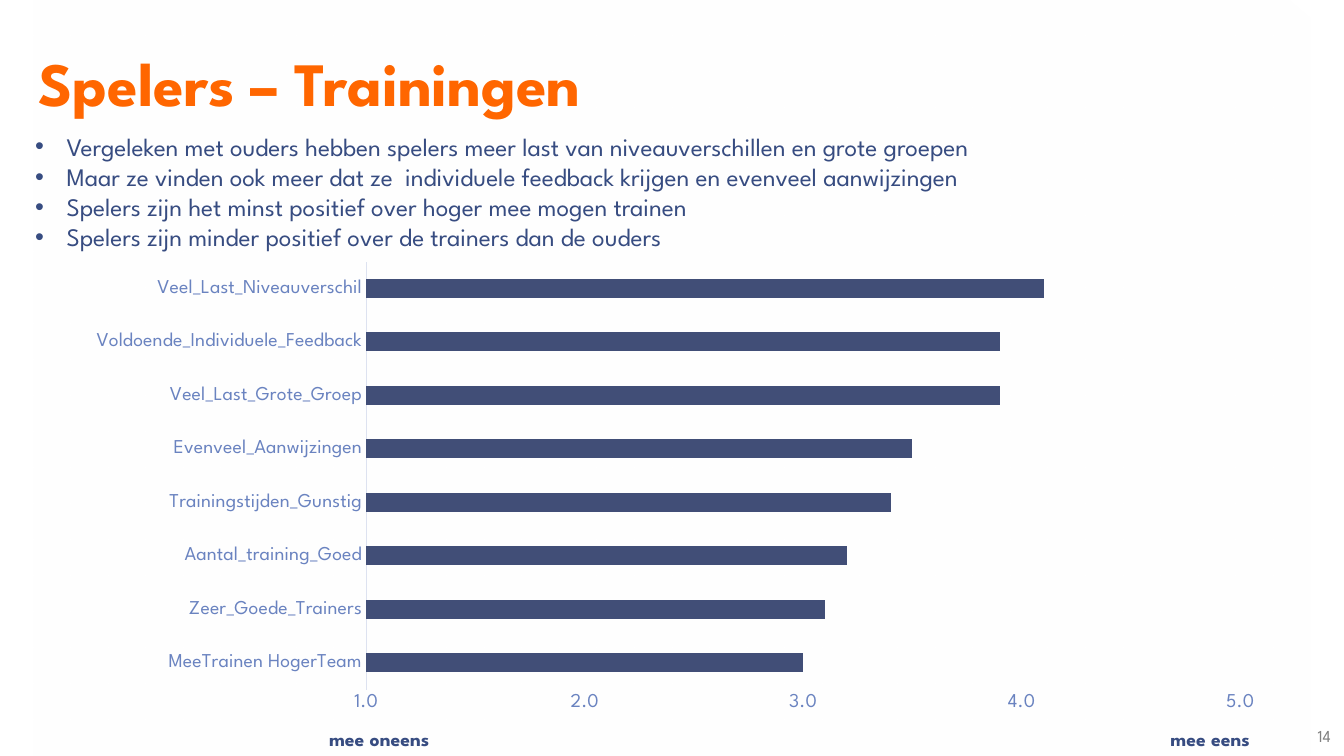
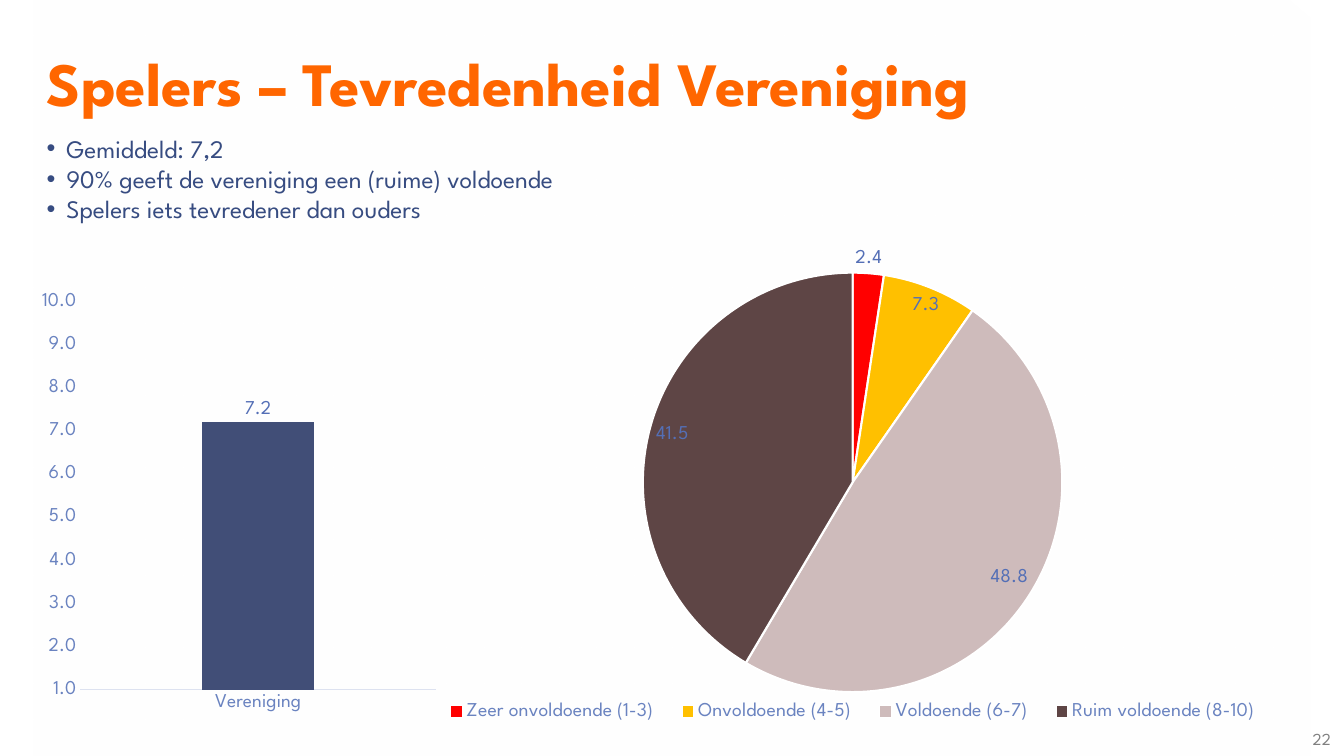
import dataclasses

import lxml.etree
import pptx
import pptx.chart.data
import pptx.dml.color
import pptx.enum.chart
import pptx.enum.shapes
import pptx.enum.text
import pptx.oxml.ns
import pptx.util

Pt = pptx.util.Pt
Kind = pptx.enum.chart.XL_CHART_TYPE
Spot = pptx.enum.chart.XL_LABEL_POSITION
Align = pptx.enum.text.PP_ALIGN
Anchor = pptx.enum.text.MSO_ANCHOR


@dataclasses.dataclass(frozen=True)
class Theme:
    font: str = "League Spartan"
    # Colours
    paper: str = "FFFFFF"
    title: str = "FF6600"
    text: str = "374C81"
    axis: str = "6A83C0"
    label: str = "546FB6"
    line: str = "DDE2F0"
    bar: str = "414E77"
    page: str = "808080"
    pie: tuple = ("FF0000", "FFC000", "CEBBBB", "5E4545")
    # Type sizes
    head: int = 44
    body: int = 18
    small: int = 14
    foot: int = 12


def color(code):
    return pptx.dml.color.RGBColor.from_string(code)


def add(parent, tag, **attrs):
    node = lxml.etree.SubElement(parent, pptx.oxml.ns.qn(tag))
    for name, value in attrs.items():
        node.set(name, str(value))
    return node


def place(parent, index, area, target=None):
    """Fix a chart part to an area, in shares of the chart."""
    for old in parent.findall(pptx.oxml.ns.qn("c:layout")):
        parent.remove(old)
    outer = add(parent, "c:layout")
    parent.insert(index, outer)
    inner = add(outer, "c:manualLayout")
    if target:
        add(inner, "c:layoutTarget", val=target)
    add(inner, "c:xMode", val="edge")
    add(inner, "c:yMode", val="edge")
    for key, value in zip("xywh", area):
        add(inner, f"c:{key}", val=value)


class Deck:
    def __init__(self, theme):
        self.theme = theme
        self.file = pptx.Presentation()
        self.file.slide_width = Pt(960)
        self.file.slide_height = Pt(540)
        self.slide = None

    def style(self, font, size, code, bold=False):
        font.name = self.theme.font
        font.size = Pt(size)
        font.bold = bold
        font.color.rgb = color(code)

    def text(self, text, box, *, size, code, bold=False, align=Align.LEFT,
             anchor=Anchor.TOP, inset=(9.4, 5), space=None, indent=0, tab=0):
        """Place text, one paragraph a line; indent gives it bullets."""
        frame = self.slide.shapes.add_textbox(*map(Pt, box)).text_frame
        frame.word_wrap = True
        frame.vertical_anchor = anchor
        frame.margin_left = frame.margin_right = Pt(inset[0])
        frame.margin_top = frame.margin_bottom = Pt(inset[1])
        for i, line in enumerate(text.split("\n")):
            para = frame.paragraphs[0] if i == 0 else frame.add_paragraph()
            props = para._p.get_or_add_pPr()
            if indent:
                props.set("marL", str(Pt(indent)))
                props.set("indent", str(-Pt(indent)))
                add(props, "a:buFont", typeface="Arial")
                add(props, "a:buChar", char="•")
            if tab:
                add(add(props, "a:tabLst"), "a:tab", pos=Pt(tab), algn="l")
            para.alignment = align
            if space:
                para.line_spacing = space
            run = para.add_run()
            run.text = line
            self.style(run.font, size, code, bold)

    def veil(self):
        """Lay a fading sheet of paper colour under the content."""
        sheet = self.slide.shapes.add_shape(
            pptx.enum.shapes.MSO_SHAPE.RECTANGLE,
            *map(Pt, (24, 0, 912, 540)))
        sheet.shadow.inherit = False
        sheet.line.fill.background()
        sheet.fill.gradient()
        sheet.fill.gradient_angle = 230
        for stop in sheet.fill.gradient_stops:
            stop.color.rgb = color(self.theme.paper)
        tones = sheet._element.spPr.iter(pptx.oxml.ns.qn("a:srgbClr"))
        for tone, alpha in zip(list(tones), (0, 55000)):
            add(tone, "a:alpha", val=alpha)

    def page(self, title, number, left, top):
        """Start a slide with its title and page number."""
        look = self.theme
        self.slide = self.file.slides.add_slide(self.file.slide_layouts[6])
        fill = self.slide.background.fill
        fill.solid()
        fill.fore_color.rgb = color(look.paper)
        self.veil()
        self.text(title, (left, 6, 912, 84), size=look.head, code=look.title,
                  bold=True, anchor=Anchor.BOTTOM, space=0.85)
        self.text(number, (873, top, 87, 25), size=look.foot, code=look.page,
                  align=Align.RIGHT, anchor=Anchor.BOTTOM)

    def list(self, lines, box, **form):
        self.text("\n".join(lines), box, size=self.theme.body,
                  code=self.theme.text, **form)

    def chart(self, kind, pairs, box):
        data = pptx.chart.data.CategoryChartData()
        data.categories = [name for name, _ in pairs]
        data.add_series("Series 1", [value for _, value in pairs])
        chart = self.slide.shapes.add_chart(kind, *map(Pt, box), data).chart
        self.style(chart.font, self.theme.small, self.theme.text)
        chart.has_title = False
        chart.has_legend = False
        chart.plots[0].vary_by_categories = False
        return chart

    def labels(self, plot, form, spot):
        plot.has_data_labels = True
        marks = plot.data_labels
        marks.show_value = True
        marks.number_format = form
        marks.number_format_is_linked = False
        marks.position = spot
        self.style(marks.font, self.theme.small, self.theme.label)

    def bars(self, kind, pairs, box, *, top, gap, area, form):
        """Draw bars on a scale from 1 to top, inside a fixed plot area."""
        look = self.theme
        chart = self.chart(kind, pairs, box)
        plot = chart.plots[0]
        plot.gap_width = gap
        fill = plot.series[0].format.fill
        fill.solid()
        fill.fore_color.rgb = color(look.bar)
        # Axes
        for axis in (chart.category_axis, chart.value_axis):
            axis.has_major_gridlines = False
            axis.major_tick_mark = pptx.enum.chart.XL_TICK_MARK.NONE
            axis.minor_tick_mark = pptx.enum.chart.XL_TICK_MARK.NONE
            self.style(axis.tick_labels.font, look.small, look.axis)
        edge = chart.category_axis.format.line
        edge.color.rgb = color(look.line)
        edge.width = Pt(0.75)
        scale = chart.value_axis
        scale.format.line.fill.background()
        scale.minimum_scale = 1
        scale.maximum_scale = top
        scale.major_unit = 1
        scale.tick_labels.number_format = form
        scale.tick_labels.number_format_is_linked = False
        place(chart._chartSpace.chart.plotArea, 0, area, "inner")
        return plot

    def pie(self, pairs, box, form, area):
        """Draw a pie with its legend in a fixed row."""
        look = self.theme
        chart = self.chart(Kind.PIE, pairs, box)
        plot = chart.plots[0]
        plot.vary_by_categories = True
        for i, code in enumerate(look.pie):
            part = plot.series[0].points[i].format
            part.fill.solid()
            part.fill.fore_color.rgb = color(code)
            part.line.color.rgb = color(look.paper)
            part.line.width = Pt(1.5)
        self.labels(plot, form, Spot.BEST_FIT)
        chart.has_legend = True
        chart.legend.position = pptx.enum.chart.XL_LEGEND_POSITION.BOTTOM
        chart.legend.include_in_layout = False
        self.style(chart.legend.font, look.small, look.axis)
        place(chart.legend._element, 1, area)


def train(deck):
    look = deck.theme
    deck.page("Spelers – Trainingen", "14", 18, 513)
    deck.list([
        "Vergeleken met ouders hebben spelers meer last van "
        "niveauverschillen en grote groepen",
        "Maar ze vinden ook meer dat ze  individuele feedback krijgen "
        "en evenveel aanwijzingen",
        "Spelers zijn het minst positief over hoger mee mogen trainen",
        "Spelers zijn minder positief over de trainers dan de ouders",
    ], (18, 90, 930, 94), inset=(7.2, 3.6), indent=22.5)
    deck.bars(Kind.BAR_CLUSTERED, [
        ("MeeTrainen HogerTeam", 3),
        ("Zeer_Goede_Trainers", 3.1),
        ("Aantal_training_Goed", 3.2),
        ("Trainingstijden_Gunstig", 3.4),
        ("Evenveel_Aanwijzingen", 3.5),
        ("Veel_Last_Grote_Groep", 3.9),
        ("Voldoende_Individuele_Feedback", 3.9),
        ("Veel_Last_Niveauverschil", 4.1),
    ], (23, 176, 918, 364), top=5, gap=182,
        area=(0.26, 0.03, 0.68, 0.84), form="###0.0")
    # Ends of the scale
    deck.text("mee oneens\tmee eens", (228, 516, 720, 24), size=look.small,
              code=look.text, bold=True, inset=(7.2, 3.6), tab=601)


def club(deck):
    deck.page("Spelers – Tevredenheid Vereniging", "22", 24, 515)
    deck.list([
        "Gemiddeld: 7,2",
        "90% geeft de vereniging een (ruime) voldoende",
        "Spelers iets tevredener dan ouders",
    ], (24, 90, 906, 78), indent=14)
    deck.pie([
        ("Zeer onvoldoende (1-3)", 2.4),
        ("Onvoldoende (4-5)", 7.3),
        ("Voldoende (6-7)", 48.8),
        ("Ruim voldoende (8-10)", 41.5),
    ], (300, 168, 618, 360), "###0.0", (0.01, 0.91, 0.98, 0.07))
    plot = deck.bars(Kind.COLUMN_CLUSTERED, [("Vereniging", 7.2)],
                     (30, 199, 296, 330), top=10, gap=219,
                     area=(0.07, 0.05, 0.88, 0.84), form="0.0")
    plot.overlap = -27
    deck.labels(plot, "0.0", Spot.OUTSIDE_END)


def main():
    deck = Deck(Theme())
    train(deck)
    club(deck)
    deck.file.save("out.pptx")


if __name__ == "__main__":
    main()
